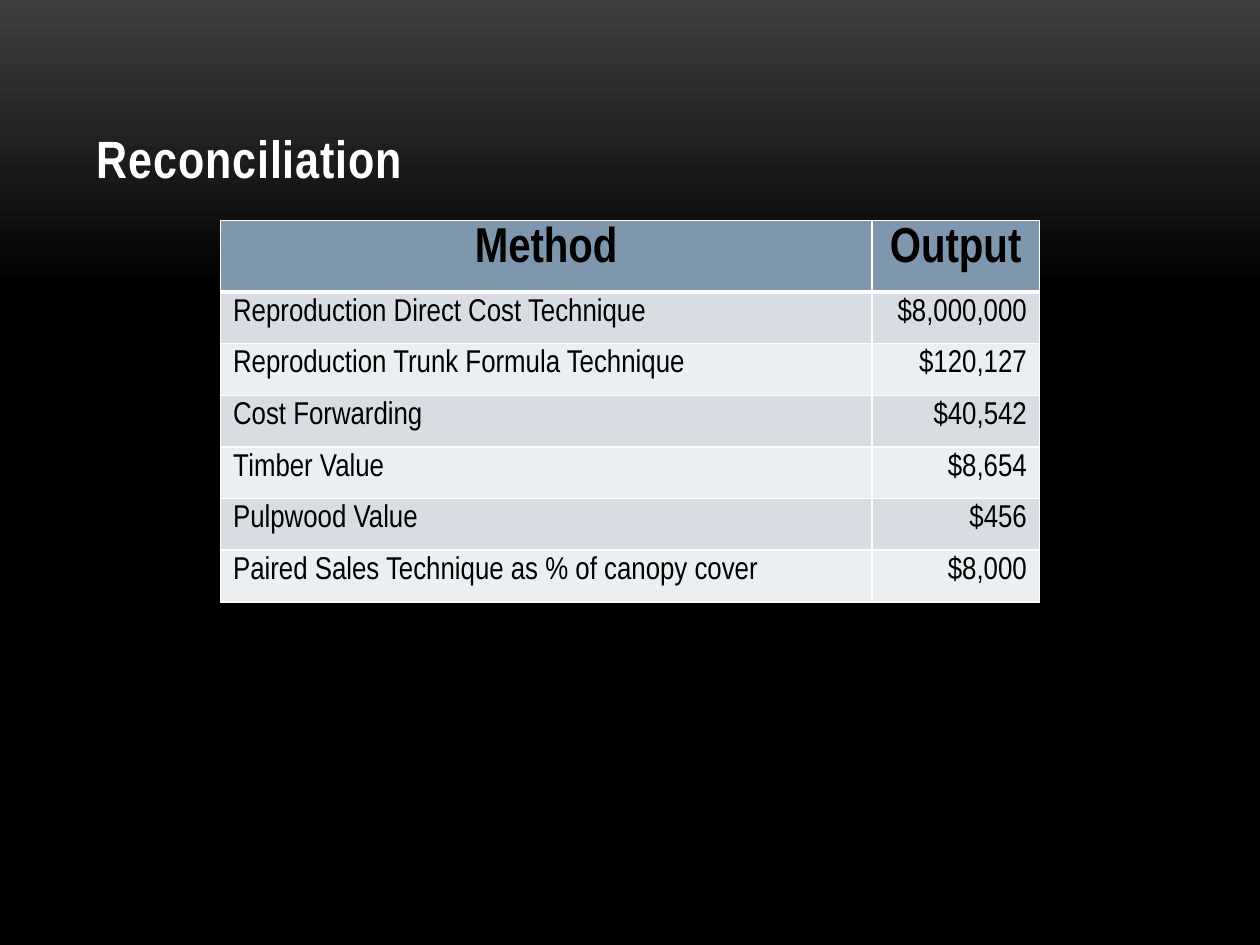
from copy import deepcopy

from lxml import etree
from pptx import Presentation
from pptx.dml.color import RGBColor
from pptx.enum import text
from pptx.oxml import ns
from pptx.util import Inches, Pt

WHITE = RGBColor(0xFF, 0xFF, 0xFF)
BLACK = RGBColor(0x00, 0x00, 0x00)
CHARCOAL = RGBColor(0x3F, 0x3F, 0x3F)
HEADER_BLUE = RGBColor(0x7E, 0x97, 0xAD)
BAND_DARK = RGBColor(0xD8, 0xDD, 0xE3)
BAND_LIGHT = RGBColor(0xEC, 0xEF, 0xF1)

VALUATIONS = [
    ("Method", "Output"),
    ("Reproduction Direct Cost Technique", "$8,000,000"),
    ("Reproduction Trunk Formula Technique", "$120,127"),
    ("Cost Forwarding", "$40,542"),
    ("Timber Value", "$8,654"),
    ("Pulpwood Value", "$456"),
    ("Paired Sales Technique as % of canopy cover", "$8,000"),
]


class SlideBuilder:
    font_name = "Arial Narrow"

    def __init__(self, slide):
        self.slide = slide

    def background(self):
        fill = self.slide.background.fill
        fill.gradient()
        fill.gradient_angle = 270
        stops = fill.gradient_stops
        for stop, position, color in zip(stops, (0, 0.31), (CHARCOAL, BLACK)):
            stop.position = position
            stop.color.rgb = color
        stop_list = self.slide.background._cSld.find(".//" + ns.qn("a:gsLst"))
        end_stop = deepcopy(stop_list[-1])
        end_stop.set("pos", "100000")
        stop_list.append(end_stop)

    def add_run(self, paragraph, words, size, color, bold):
        run = paragraph.add_run()
        run.text = words
        run.font.name = self.font_name
        run.font.size = Pt(size)
        run.font.bold = bold
        run.font.color.rgb = color
        return run

    def title(self, words, left, top, width, height):
        box = self.slide.shapes.add_textbox(
            Inches(left), Inches(top), Inches(width), Inches(height))
        frame = box.text_frame
        frame.word_wrap = True
        frame.vertical_anchor = text.MSO_ANCHOR.BOTTOM
        run = self.add_run(frame.paragraphs[0], words, 30, WHITE, True)
        run.font._element.set("spc", "50")

    def borders(self, cell, top, bottom):
        properties = cell._tc.get_or_add_tcPr()
        widths = {"a:lnL": 1, "a:lnR": 1, "a:lnT": top, "a:lnB": bottom}
        for index, (tag, width) in enumerate(widths.items()):
            line = etree.Element(ns.qn(tag), w=str(Pt(width)))
            solid = etree.SubElement(line, ns.qn("a:solidFill"))
            etree.SubElement(solid, ns.qn("a:srgbClr"), val=str(WHITE))
            properties.insert(index, line)

    def cell(self, cell, words, row, column):
        header = row == 0
        cell.margin_top = cell.margin_bottom = Inches(0.05)
        cell.fill.solid()
        if header:
            cell.fill.fore_color.rgb = HEADER_BLUE
        else:
            cell.fill.fore_color.rgb = BAND_DARK if row % 2 else BAND_LIGHT
        paragraph = cell.text_frame.paragraphs[0]
        if header:
            paragraph.alignment = text.PP_ALIGN.CENTER
        elif column == 1:
            paragraph.alignment = text.PP_ALIGN.RIGHT
        self.add_run(paragraph, words, 28 if header else 18, BLACK, header)
        self.borders(cell, 3 if row == 1 else 1, 3 if header else 1)

    def table(self, rows, left, top, column_widths, row_height):
        table = self.slide.shapes.add_table(
            len(rows), len(column_widths), Inches(left), Inches(top),
            Inches(sum(column_widths)), Inches(row_height * len(rows))).table
        for column, width in zip(table.columns, column_widths):
            column.width = Inches(width)
        for row, values in enumerate(rows):
            table.rows[row].height = Inches(row_height)
            for column, words in enumerate(values):
                self.cell(table.cell(row, column), words, row, column)


def main():
    deck = Presentation()
    deck.slide_width, deck.slide_height = Inches(10), Inches(7.5)
    builder = SlideBuilder(deck.slides.add_slide(deck.slide_layouts[6]))
    builder.background()
    builder.title("Reconciliation", 0.67, 0.3, 8.67, 1.25)
    builder.table(VALUATIONS, 1.75, 1.75, (5.17, 1.33), 0.41)
    deck.save("out.pptx")


if __name__ == "__main__":
    main()
